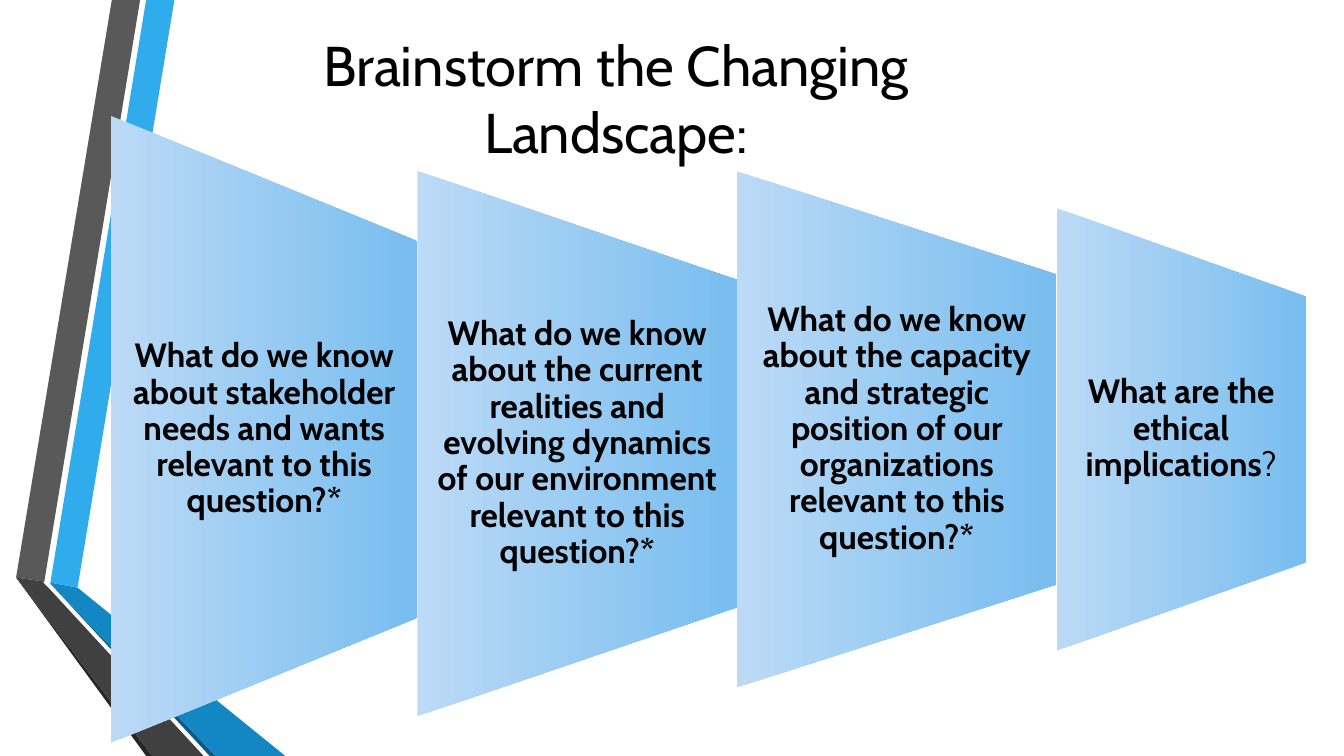
"""Build the slide of four narrowing question panels beside a folded ribbon."""
from pptx import Presentation
from pptx import util as u
from pptx.dml.color import RGBColor
from pptx.enum import shapes, text

THEME = {
    "font": "Cabin",
    "text": RGBColor.from_string("000000"),
    "panel_start": RGBColor.from_string("BCDAF6"),
    "panel_end": RGBColor.from_string("78BDEF"),
    "title_size": u.Pt(40),
    "panel_size": u.Pt(24),
}
GRID = u.Inches(0.01)
PANEL_LEFT = 1.1
TEXT_SHARE = 0.6

RIBBONS = [
    ("30ACEC", [(50, 578), (77, 583), (173, 0), (145, 0)]),
    ("595959", [(139, 0), (111, 0), (16, 573), (44, 577)]),
    ("262626", [(16, 573), (145, 750), (151, 750)]),
    ("0C5A82", [(50, 579), (208, 750), (214, 750)]),
    ("1287C3", [(50, 579), (214, 750), (283, 750), (77, 583), (50, 578)]),
    ("404040", [(202, 750), (48, 583), (43, 578), (44, 577), (16, 573), (151, 750)]),
]

PANELS = [
    (3.04, 6.22, 4.26, ["What do we know about stakeholder needs and wants "
                        "relevant to this question?*"]),
    (3.17, 5.41, 4.4, ["What do we know about the current realities and evolving "
                       "dynamics of our environment relevant to this question?*"]),
    (3.17, 5.12, 4.26, ["What do we know about the capacity and strategic position "
                        "of our organizations relevant to this question?*"]),
    (2.47, 4.39, 4.26, ["What are the ethical implications", "?"]),
]


def style_run(run, size, bold):
    """Apply the theme font to a run."""
    run.font.name = THEME["font"]
    run.font.size = size
    run.font.bold = bold
    run.font.color.rgb = THEME["text"]


presentation = Presentation()
presentation.slide_width = u.Inches(13.33)
presentation.slide_height = u.Inches(7.5)
slide = presentation.slides.add_slide(presentation.slide_layouts[5])

for color, points in RIBBONS:
    builder = slide.shapes.build_freeform(*points[0], scale=GRID)
    builder.add_line_segments(points[1:], close=True)
    ribbon = builder.convert_to_shape()
    ribbon.shadow.inherit = False
    ribbon.fill.solid()
    ribbon.fill.fore_color.rgb = RGBColor.from_string(color)
    ribbon.line.fill.background()

left = PANEL_LEFT
for width, height, middle, parts in PANELS:
    panel = slide.shapes.add_shape(
        shapes.MSO_SHAPE.FLOWCHART_MANUAL_OPERATION,
        u.Inches(left + (width - height) / 2), u.Inches(middle - width / 2),
        u.Inches(height), u.Inches(width))
    panel.rotation = 270
    panel.shadow.inherit = False
    panel.line.fill.background()
    panel.fill.gradient()
    panel.fill.gradient_angle = 270
    start, end = panel.fill.gradient_stops
    start.color.rgb, start.position = THEME["panel_start"], 0
    end.color.rgb, end.position = THEME["panel_end"], 1

    text_height = height * TEXT_SHARE
    question = slide.shapes.add_textbox(
        u.Inches(left), u.Inches(middle - text_height / 2),
        u.Inches(width), u.Inches(text_height))
    frame = question.text_frame
    frame.word_wrap = True
    frame.vertical_anchor = text.MSO_ANCHOR.MIDDLE
    frame.margin_left = frame.margin_right = u.Inches(0.09)
    frame.margin_top = frame.margin_bottom = 0
    paragraph = frame.paragraphs[0]
    paragraph.alignment = text.PP_ALIGN.CENTER
    paragraph.line_spacing = 0.9
    for index, part in enumerate(parts):
        run = paragraph.add_run()
        run.text = part
        style_run(run, THEME["panel_size"], index == 0)
    left += width

title = slide.shapes.title
title.left, title.top = u.Inches(2.39), u.Inches(0.25)
title.width, title.height = u.Inches(7.44), u.Inches(1.44)
title.text_frame.text = "Brainstorm the Changing Landscape:"
title.text_frame.word_wrap = True
title.text_frame.auto_size = text.MSO_AUTO_SIZE.NONE
title.text_frame.vertical_anchor = text.MSO_ANCHOR.MIDDLE
title_paragraph = title.text_frame.paragraphs[0]
title_paragraph.alignment = text.PP_ALIGN.CENTER
style_run(title_paragraph.runs[0], THEME["title_size"], False)

presentation.save("out.pptx")
